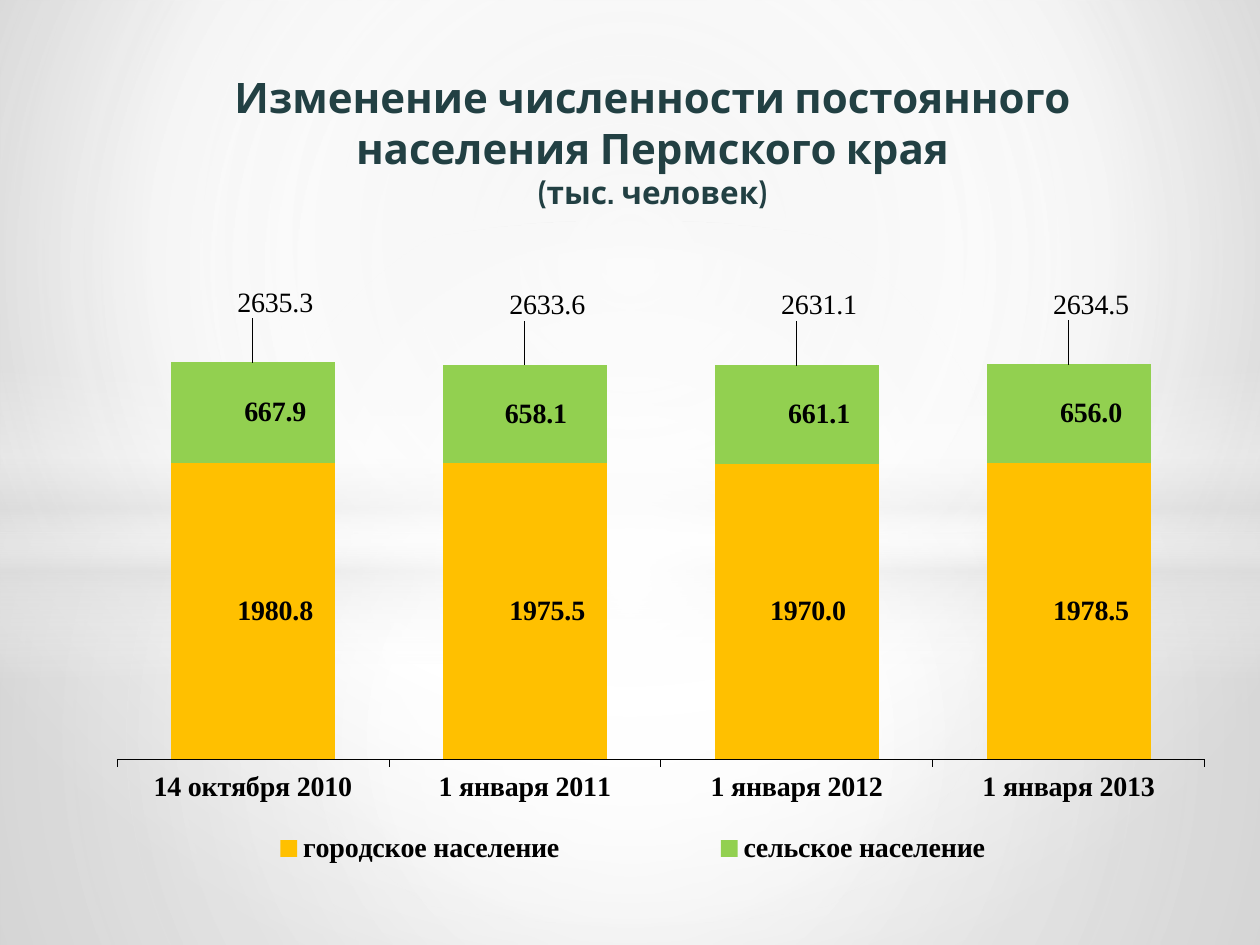
"""Build a slide with a stacked column chart of urban and rural population."""
from lxml import etree
from pptx import Presentation
from pptx.chart.data import CategoryChartData
from pptx.dml.color import RGBColor
from pptx.enum.chart import XL_CHART_TYPE, XL_LEGEND_POSITION, XL_TICK_LABEL_POSITION, XL_TICK_MARK
from pptx.enum.shapes import MSO_SHAPE
from pptx.enum.text import MSO_ANCHOR, MSO_AUTO_SIZE, PP_ALIGN
from pptx.oxml import parse_xml
from pptx.oxml.ns import nsdecls, qn
from pptx.util import Inches, Pt

STACKED = XL_CHART_TYPE.COLUMN_STACKED
BOTTOM = XL_LEGEND_POSITION.BOTTOM
NO_LABELS = XL_TICK_LABEL_POSITION.NONE
NO_TICKS, OUTSIDE = XL_TICK_MARK.NONE, XL_TICK_MARK.OUTSIDE
RECTANGLE, OVAL = MSO_SHAPE.RECTANGLE, MSO_SHAPE.OVAL
TOP, CENTER, NO_FIT = MSO_ANCHOR.TOP, PP_ALIGN.CENTER, MSO_AUTO_SIZE.NONE

WHITE = RGBColor(0xFF, 0xFF, 0xFF)
PALE = RGBColor(0xDE, 0xDE, 0xDE)
SILVER = RGBColor(0xD5, 0xD5, 0xD5)
GRAY = RGBColor(0xB2, 0xB2, 0xB2)
BLACK = RGBColor(0, 0, 0)
TEAL = RGBColor(0x22, 0x40, 0x43)
AMBER = RGBColor(0xFF, 0xC0, 0x00)
GREEN = RGBColor(0x92, 0xD0, 0x50)
SERIF = "Times New Roman"


def add_span(para, text, *, size, color, font, bold=False):
    span = para.add_run()
    span.text = text
    span.font.size = Pt(size)
    span.font.color.rgb = color
    span.font.name = font
    span.font.bold = bold


def set_gradient(gradient, stops, focus=None):
    for child in list(gradient):
        gradient.remove(child)
    stop_list = etree.SubElement(gradient, qn("a:gsLst"))
    for position, color, alpha in stops:
        stop = etree.SubElement(stop_list, qn("a:gs"), pos=str(position * 1000))
        tint = etree.SubElement(stop, qn("a:srgbClr"), val=str(color))
        etree.SubElement(tint, qn("a:alpha"), val=str(alpha * 1000))
    if focus:
        path = etree.SubElement(gradient, qn("a:path"), path="circle")
        edges = {side: str(share * 1000) for side, share in zip("ltrb", focus)}
        etree.SubElement(path, qn("a:fillToRect"), **edges)
    else:
        etree.SubElement(gradient, qn("a:lin"), ang="5400000", scaled="0")


deck = Presentation()
deck.slide_width, deck.slide_height = Inches(10), Inches(7.5)
page = deck.slides.add_slide(deck.slide_layouts[5])

page.background.fill.gradient()
set_gradient(page.element.xpath("./p:cSld/p:bg//a:gradFill")[0],
             [(0, SILVER, 100), (60, WHITE, 100), (100, GRAY, 100)], (20, 10, 20, 60))

MIDDLE = (50, 50, 50, 50)
backdrops = [
    (RECTANGLE, 0, 4.23, 10, 3.27, [(0, WHITE, 91), (37, WHITE, 76), (100, PALE, 79)], MIDDLE),
    (RECTANGLE, 0, 0, 10, 4.23, [(0, WHITE, 89), (48, WHITE, 62), (100, PALE, 79)], MIDDLE),
    (RECTANGLE, 0, 2.9, 10, 2.5, [(0, WHITE, 0), (29, WHITE, 30), (45, PALE, 40),
                                  (55, WHITE, 26), (65, PALE, 60), (100, WHITE, 0)], None),
    (OVAL, 0, 1.75, 10, 5.58, [(0, WHITE, 100), (54, WHITE, 0)], MIDDLE),
]
for kind, left, top, width, height, stops, focus in backdrops:
    backdrop = page.shapes.add_shape(kind, Inches(left), Inches(top), Inches(width), Inches(height))
    backdrop.shadow.inherit = False
    backdrop.line.fill.background()
    backdrop.fill.gradient()
    set_gradient(backdrop.element.xpath(".//a:gradFill")[0], stops, focus)

title = page.shapes.title
title.element.getparent().append(title.element)
title.left, title.top, title.width, title.height = Inches(0.83), Inches(0.52), Inches(8.5), Inches(1.26)
frame = title.text_frame
frame.word_wrap = True
frame.auto_size = NO_FIT
frame.vertical_anchor = TOP
para = frame.paragraphs[0]
para.alignment = CENTER
para._p.get_or_add_pPr().set("marL", str(Inches(0.2)))
add_span(para, "Изменение численности постоянного населения Пермского края",
         size=24, color=TEAL, font="Cabin", bold=True)
para.add_line_break()
add_span(para, "(тыс. человек)", size=18, color=TEAL, font="Cabin", bold=True)

data = CategoryChartData(number_format="0.0")
data.categories = ["14 октября 2010", "1 января 2011", "1 января 2012", "1 января 2013"]
data.add_series("городское население", [1980.8, 1975.5, 1970, 1978.5])
data.add_series("сельское население", [667.9, 658.1, 661.1, 656])
data.add_series("Series 3", [1, 1, 1, 1])
chart = page.shapes.add_chart(STACKED, Inches(0.75), Inches(2.25), Inches(8.9), Inches(4.72), data).chart
chart.has_title = False
chart.font.size = Pt(10)
chart.font.name = SERIF
chart.font.bold = True
chart.font.color.rgb = BLACK

plot = chart.plots[0]
plot.gap_width = 66
plot.overlap = 100
plot.vary_by_categories = False

dates = chart.category_axis
dates.major_tick_mark = OUTSIDE
dates.minor_tick_mark = NO_TICKS
dates.tick_labels.font.size = Pt(16)
dates.tick_labels.font.bold = True
dates.format.line.color.rgb = BLACK
dates.format.line.width = Pt(0.25)
scale = chart.value_axis
scale.minimum_scale, scale.maximum_scale = 0, 2700
scale.has_major_gridlines = False
scale.major_tick_mark = OUTSIDE
scale.tick_label_position = NO_LABELS
scale.format.line.fill.background()

chart.has_legend = True
legend = chart.legend
legend.position = BOTTOM
legend.include_in_layout = False
legend.font.size = Pt(16)
legend.font.bold = True
chart.element.xpath(".//c:legendPos")[0].addnext(parse_xml(
    f'<c:legendEntry {nsdecls("c")}><c:idx val="2"/><c:delete val="1"/></c:legendEntry>'))

totals = ["2635.3", "2633.6", "2631.1", "2634.5"]
label_shifts = []
for series, color, rise, shifts in zip(
        plot.series, [AMBER, GREEN, GREEN], [0, 0, -0.1],
        [(0.02, 0.02, 0.01, 0.02), (0.02, 0.01, 0.02, 0.02), (0.02, 0.02, 0.02, 0.02)]):
    series.format.fill.solid()
    series.format.fill.fore_color.rgb = color
    for index, shift in enumerate(shifts):
        label = series.points[index].data_label
        if rise:
            add_span(label.text_frame.paragraphs[0], totals[index], size=16, color=BLACK, font=SERIF)
        else:
            label.font.size = Pt(16)
            label.font.bold = True
        label_shifts.append((shift, rise))

layouts = [(label.find(qn("c:idx")), {"x": shift, "y": rise})
           for label, (shift, rise) in zip(chart.element.xpath(".//c:dLbl"), label_shifts)]
layouts.append((chart.element.xpath(".//c:legendEntry")[0],
                {"xMode": "edge", "yMode": "edge", "x": 0.03, "y": 0.91, "w": 0.9, "h": 0.08}))
layouts.append((None, {"layoutTarget": "inner", "xMode": "edge", "yMode": "edge",
                       "x": 0.02, "y": 0.12, "w": 0.97, "h": 0.68}))
for anchor, settings in layouts:
    layout = etree.Element(qn("c:layout"))
    manual = etree.SubElement(layout, qn("c:manualLayout"))
    for name, value in settings.items():
        etree.SubElement(manual, qn(f"c:{name}"), val=str(value))
    parent = chart.element.xpath(".//c:plotArea")[0] if anchor is None else anchor.getparent()
    for old in parent.findall(qn("c:layout")):
        parent.remove(old)
    if anchor is None:
        parent.insert(0, layout)
    else:
        anchor.addnext(layout)

deck.save("out.pptx")
